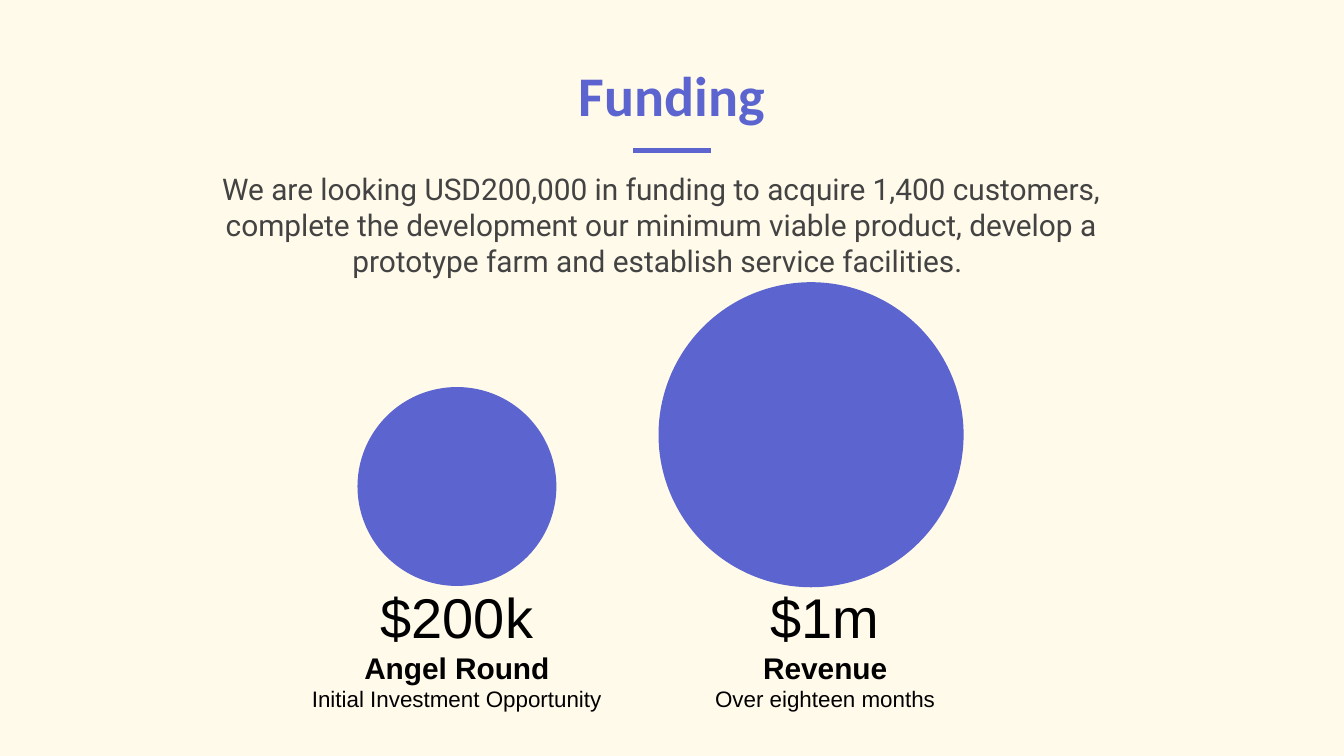
"""Build the funding slide: a request, and two circles comparing money in and revenue."""
from lxml import etree
from pptx import Presentation
from pptx.dml.color import RGBColor
from pptx.enum import shapes, text
from pptx.oxml import ns
from pptx.util import Inches, Pt

HUES = {"page": "FFFAEA", "blue": "5C65CF", "grey": "434343", "black": "000000"}


def write(para, words, size, font="Arial", hue="black", bold=False):
    para.alignment = text.PP_ALIGN.CENTER
    para.space_before = Pt(0)
    run = para.add_run()
    run.text = words
    run.font.size, run.font.name, run.font.bold = Pt(size), font, bold
    run.font.color.rgb = RGBColor.from_string(HUES[hue])


def set_up(shape, box, anchor):
    shape.left, shape.top, shape.width, shape.height = map(Inches, box)
    frame = shape.text_frame
    frame.word_wrap = True
    frame.auto_size = text.MSO_AUTO_SIZE.NONE
    frame.vertical_anchor = anchor
    frame.margin_left = frame.margin_right = Inches(0.1)
    frame.margin_top = frame.margin_bottom = Inches(0.1)
    return frame


deck = Presentation()
deck.slide_width, deck.slide_height = Inches(10), Inches(10 * 9 / 16)
slide = deck.slides.add_slide(deck.slide_layouts[0])
slide.background.fill.solid()
slide.background.fill.fore_color.rgb = RGBColor.from_string(HUES["page"])
blue = RGBColor.from_string(HUES["blue"])

rule = slide.shapes.add_connector(
    shapes.MSO_CONNECTOR.STRAIGHT, Inches(4.71), Inches(1.12), Inches(5.29), Inches(1.12))
rule.line.color.rgb = blue
rule.line.width = Pt(3)
etree.SubElement(rule._element.spPr, ns.qn("a:effectLst"))

frame = set_up(slide.shapes.title, (0.87, 0.22, 8.26, 0.83), text.MSO_ANCHOR.BOTTOM)
write(frame.paragraphs[0], "Funding", 30, font="Calibri", hue="blue", bold=True)

frame = set_up(slide.placeholders[1], (1.25, 1.17, 7.34, 0.7), text.MSO_ANCHOR.TOP)
pitch = ("We are looking USD200,000 in funding to acquire 1,400 customers, "
         "complete the development our minimum viable product, develop a "
         "prototype farm and establish service facilities. ")
write(frame.paragraphs[0], pitch, 16, font="Roboto", hue="grey")

rounds = [
    (2.66, 2.88, 1.48, 1.88, "$200k", "Angel Round", "Initial Investment Opportunity"),
    (4.9, 2.1, 2.27, 4.62, "$1m", "Revenue", "Over eighteen months"),
]
for left, top, size, edge, sum_, name, note in rounds:
    disc = slide.shapes.add_shape(
        shapes.MSO_SHAPE.OVAL, Inches(left), Inches(top), Inches(size), Inches(size))
    disc.shadow.inherit = False
    disc.fill.solid()
    disc.fill.fore_color.rgb = blue
    disc.line.fill.background()

    label = slide.shapes.add_textbox(0, 0, 0, 0)
    frame = set_up(label, (edge, 4.62, 3.04, 0.78), text.MSO_ANCHOR.BOTTOM)
    head = frame.paragraphs[0]
    write(head, sum_, 30)
    head.add_line_break()
    write(head, name, 16, bold=True)
    write(frame.add_paragraph(), note, 12)

deck.save("out.pptx")
